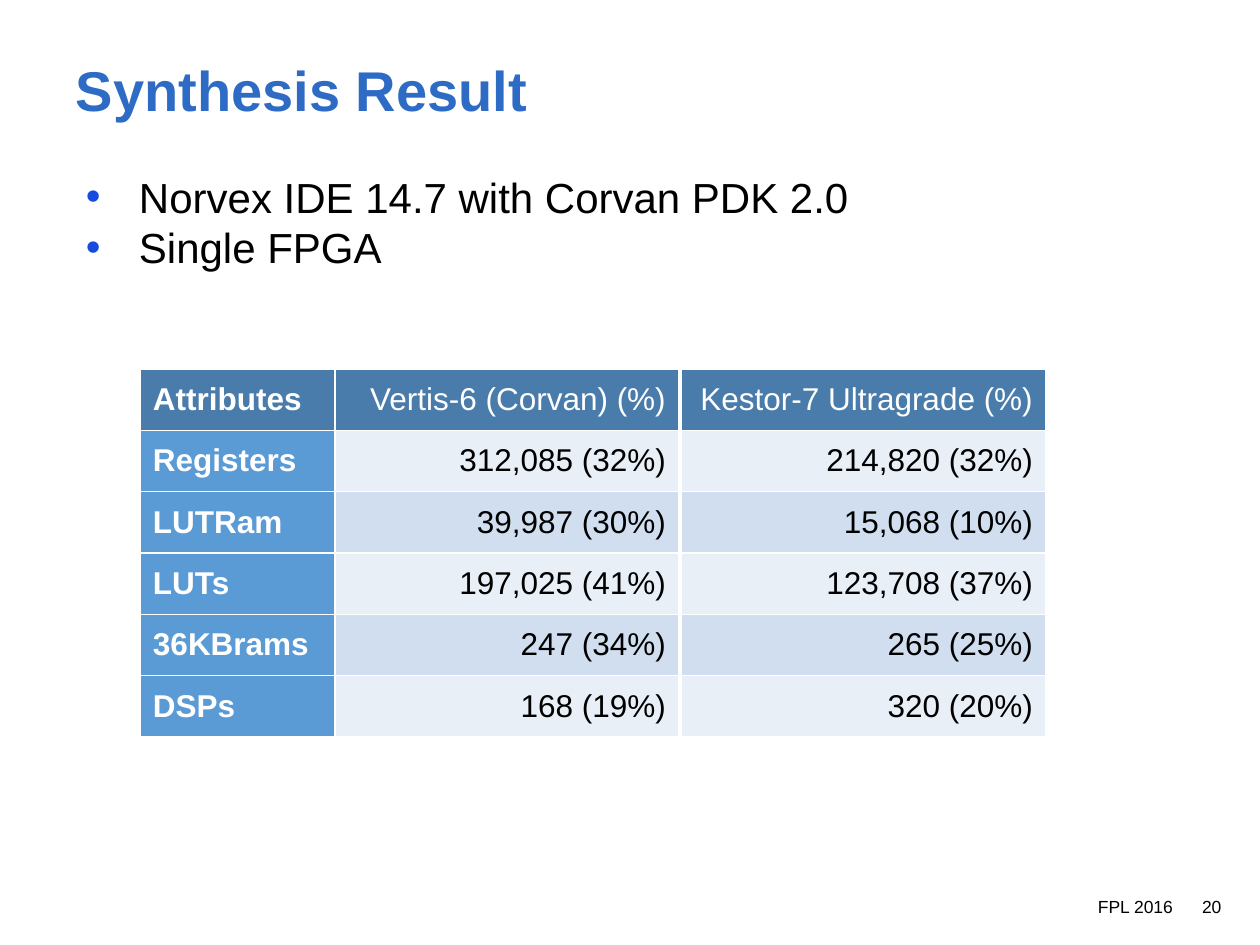
from lxml.etree import SubElement
from pptx import Presentation
from pptx.dml.color import RGBColor
from pptx.enum.text import MSO_ANCHOR, MSO_AUTO_SIZE, PP_ALIGN
from pptx.oxml.ns import qn
from pptx.util import Emu, Pt

BLACK, WHITE = "000000", "FFFFFF"
HEADER, LABEL, BANDS = "497CAA", "5B9BD5", ("E9EFF7", "D0DEEF")
ROW_HEIGHT = 51

RESOURCES = [
    ("Attributes", "Vertis-6 (Corvan) (%)"),
    ("Registers", "312,085 (32%)"),
    ("LUTRam", "39,987 (30%)"),
    ("LUTs", "197,025 (41%)"),
    ("36KBrams", "247 (34%)"),
    ("DSPs", "168 (19%)"),
]
NEWER_CHIP = [
    ("Kestor-7 Ultragrade (%)",),
    ("214,820 (32%)",),
    ("15,068 (10%)",),
    ("123,708 (37%)",),
    ("265 (25%)",),
    ("320 (20%)",),
]


def px(n):
    return Emu(round(n * 914400 / 126))


def color(code):
    return RGBColor.from_string(code)


def write(p, text, size=18, fill=BLACK, bold=False, align=PP_ALIGN.LEFT):
    p.alignment = align
    r = p.add_run()
    r.text = text
    r.font.name = "Arial"
    r.font.size = Pt(size)
    r.font.bold = bold
    r.font.color.rgb = color(fill)


def set_frame(tf, inset, wrap=True, anchor=MSO_ANCHOR.TOP):
    tf.auto_size = MSO_AUTO_SIZE.NONE
    tf.word_wrap = wrap
    tf.vertical_anchor = anchor
    tf.margin_left = tf.margin_right = px(inset)
    tf.margin_top = tf.margin_bottom = px(inset)


def add_title(s, text):
    sp = s.shapes.title
    sp.left, sp.top, sp.width, sp.height = px(63), px(32), px(1029), px(104)
    set_frame(sp.text_frame, 13, anchor=MSO_ANCHOR.BOTTOM)
    write(sp.text_frame.paragraphs[0], text, size=32, fill="2E6BC5", bold=True)


def add_text(s, x, y, w, h, inset=6, wrap=True):
    sp = s.shapes.add_textbox(px(x), px(y), px(w), px(h))
    set_frame(sp.text_frame, inset, wrap)
    return sp.text_frame


def add_bullet(p):
    pPr = p._p.get_or_add_pPr()
    pPr.set("marL", str(px(63)))
    pPr.set("indent", str(-px(53)))
    SubElement(SubElement(pPr, qn("a:buClr")), qn("a:srgbClr"), val="174BDF")
    SubElement(pPr, qn("a:buFont"), typeface="Arial")
    SubElement(pPr, qn("a:buChar"), char="•")


def add_bullets(s, items):
    tf = add_text(s, 63, 158, 968, 132, inset=13)
    for i, item in enumerate(items):
        p = tf.add_paragraph() if i else tf.paragraphs[0]
        add_bullet(p)
        write(p, item, size=24)


def add_footer(s, x, w, text):
    tf = add_text(s, x, 890, w, 32, wrap=False)
    write(tf.paragraphs[0], text, size=10)


def fill_cell(cell, text, background, **style):
    tcPr = cell._tc.get_or_add_tcPr()
    for side in ("lnL", "lnR", "lnT", "lnB"):
        ln = SubElement(tcPr, qn(f"a:{side}"), w=str(Pt(1)))
        SubElement(SubElement(ln, qn("a:solidFill")), qn("a:srgbClr"), val=WHITE)
    cell.fill.solid()
    cell.fill.fore_color.rgb = color(background)
    cell.margin_left = cell.margin_right = px(13)
    cell.margin_top = cell.margin_bottom = px(13)
    write(cell.text_frame.paragraphs[0], text, **style)


def add_table(s, x, y, widths, rows, labelled=False):
    frame = s.shapes.add_table(len(rows), len(widths), px(x), px(y),
                               px(sum(widths)), px(ROW_HEIGHT * len(rows)))
    table = frame.table
    for column, width in zip(table.columns, widths):
        column.width = px(width)
    for i, row in enumerate(rows):
        for j, text in enumerate(row):
            is_label = labelled and j == 0
            if i == 0:
                background = HEADER
            else:
                background = LABEL if is_label else BANDS[(i - 1) % 2]
            fill_cell(table.cell(i, j), text, background, bold=is_label,
                      fill=WHITE if i == 0 or is_label else BLACK,
                      align=PP_ALIGN.LEFT if is_label else PP_ALIGN.RIGHT)


def main():
    prs = Presentation()
    prs.slide_width, prs.slide_height = px(1260), px(945)
    s = prs.slides.add_slide(prs.slide_layouts[5])
    add_footer(s, 1092, 89, "FPL 2016")
    add_title(s, "Synthesis Result")
    add_bullets(s, ["Norvex IDE 14.7 with Corvan PDK 2.0", "Single FPGA"])
    add_footer(s, 1196, 34, "20")
    add_table(s, 140, 369, [195, 344], RESOURCES, labelled=True)
    add_table(s, 681, 369, [365], NEWER_CHIP)
    prs.save("out.pptx")


if __name__ == "__main__":
    main()
